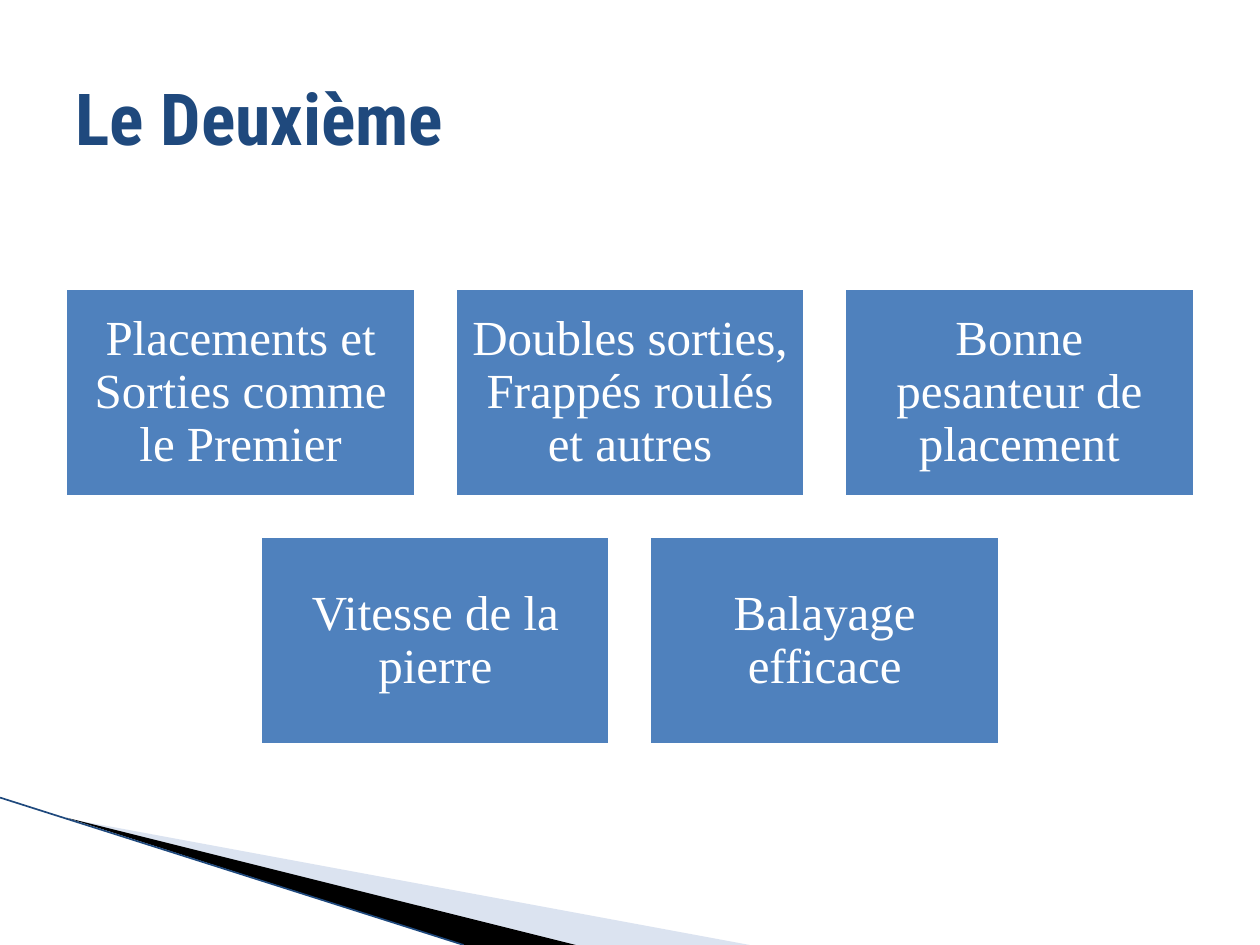
from dataclasses import dataclass

from lxml import etree
from pptx import Presentation
from pptx import util as u
from pptx.dml.color import RGBColor
from pptx.enum import shapes, text
from pptx.oxml.ns import qn


@dataclass(frozen=True)
class Theme:
    navy: RGBColor = RGBColor(0x1F, 0x49, 0x7D)
    blue: RGBColor = RGBColor(0x4F, 0x81, 0xBD)
    pale: RGBColor = RGBColor(0xA7, 0xB9, 0xDB)
    black: RGBColor = RGBColor(0, 0, 0)
    white: RGBColor = RGBColor(0xFF, 0xFF, 0xFF)
    title_font: str = "Roboto Condensed"
    body_font: str = "Times New Roman"
    title_size: int = 41
    body_size: int = 28


theme = Theme()


def add_run(p, words, font, size, color, bold=False):
    r = p.add_run()
    r.text = words
    r.font.name = font
    r.font.size = u.Pt(size)
    r.font.color.rgb = color
    r.font.bold = bold


prs = Presentation()
prs.slide_width, prs.slide_height = u.Inches(10), u.Inches(7.5)
s = prs.slides.add_slide(prs.slide_layouts[6])

# Corner wedges, pale behind black
wedges = [
    ([(0.55, 6.5), (5.95, 7.5), (4.56, 7.5)], theme.pale, 40),
    ([(0.53, 6.49), (4.57, 7.5), (3.68, 7.5)], theme.black, 100),
]
for points, color, opacity in wedges:
    corners = [(u.Inches(x), u.Inches(y)) for x, y in points]
    builder = s.shapes.build_freeform(*corners[0])
    builder.add_line_segments(corners[1:], close=True)
    sp = builder.convert_to_shape()
    sp.shadow.inherit = False
    sp.fill.solid()
    sp.fill.fore_color.rgb = color
    sp.line.fill.background()
    if opacity < 100:
        clr = sp.fill._xPr.find(".//" + qn("a:srgbClr"))
        etree.SubElement(clr, qn("a:alpha"), val=str(opacity * 1000))

# Corner edge line
edge = s.shapes.add_connector(
    shapes.MSO_CONNECTOR.STRAIGHT,
    u.Inches(0), u.Inches(6.33), u.Inches(3.68), u.Inches(7.5))
edge.line.color.rgb = theme.navy
edge.line.width = u.Pt(0.95)
etree.SubElement(edge._element.spPr, qn("a:effectLst"))

# Cards, each row centred on the slide
card_w, card_h, gap = 2.81, 1.69, 0.28
top = 2.27
rows = [
    ["Placements et Sorties comme le Premier",
     "Doubles sorties, Frappés roulés et autres",
     "Bonne pesanteur de placement"],
    ["Vitesse de la pierre", "Balayage efficace"],
]
for i, row in enumerate(rows):
    left = (10 - len(row) * card_w - (len(row) - 1) * gap) / 2
    for j, words in enumerate(row):
        sp = s.shapes.add_shape(
            shapes.MSO_SHAPE.RECTANGLE,
            u.Inches(left + j * (card_w + gap)), u.Inches(top + i * (card_h + gap)),
            u.Inches(card_w), u.Inches(card_h))
        sp.shadow.inherit = False
        sp.fill.solid()
        sp.fill.fore_color.rgb = theme.blue
        sp.line.color.rgb = theme.white
        sp.line.width = u.Pt(4.33)
        tf = sp.text_frame
        tf.word_wrap = True
        tf.vertical_anchor = text.MSO_ANCHOR.MIDDLE
        tf.margin_left = tf.margin_right = u.Inches(0.12)
        tf.margin_top = tf.margin_bottom = u.Inches(0.12)
        p = tf.paragraphs[0]
        p.alignment = text.PP_ALIGN.CENTER
        p.line_spacing = 0.9
        add_run(p, words, theme.body_font, theme.body_size, theme.white)

# Title
title = s.shapes.add_textbox(u.Inches(0.5), u.Inches(0.3), u.Inches(9), u.Inches(1.25))
tf = title.text_frame
tf.word_wrap = True
tf.vertical_anchor = text.MSO_ANCHOR.MIDDLE
add_run(tf.paragraphs[0], "Le Deuxième", theme.title_font, theme.title_size,
        theme.navy, bold=True)

prs.save("out.pptx")
